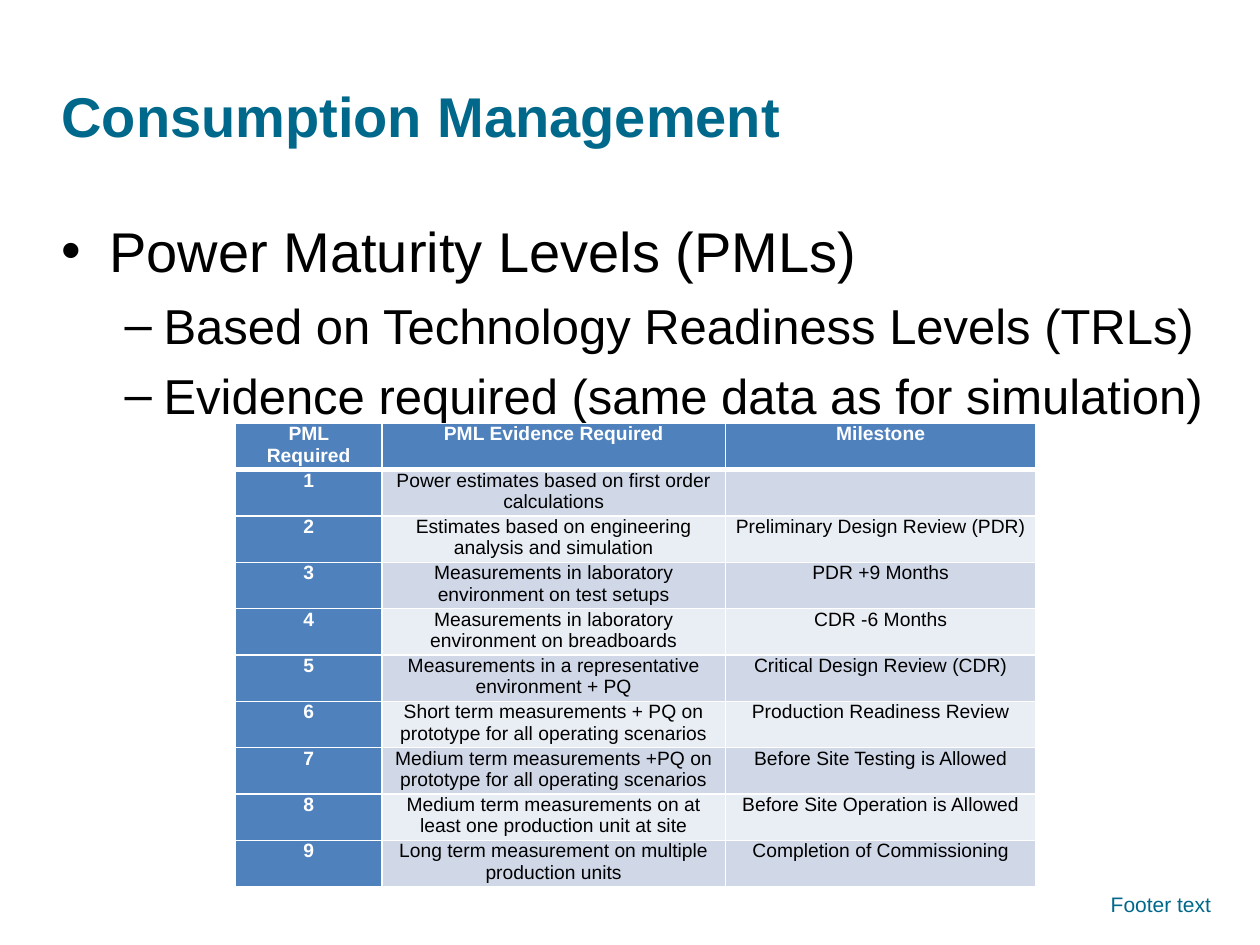
from lxml.etree import SubElement
from pptx import Presentation
from pptx.dml.color import RGBColor
from pptx.enum.text import MSO_ANCHOR, PP_ALIGN
from pptx.oxml.ns import qn
from pptx.util import Inches, Pt

# Content
TITLE = "Consumption Management"
BULLETS = [
    (0, "Power Maturity Levels (PMLs)"),
    (1, "Based on Technology Readiness Levels (TRLs)"),
    (1, "Evidence required (same data as for simulation)"),
]
FOOTER = "Footer text"
HEADER = ("PML Required", "PML Evidence Required", "Milestone")
LEVELS = [
    ("Power estimates based on first order calculations", ""),
    ("Estimates based on engineering analysis and simulation", "Preliminary Design Review (PDR)"),
    ("Measurements in laboratory environment on test setups", "PDR +9 Months"),
    ("Measurements in laboratory environment on breadboards", "CDR -6 Months"),
    ("Measurements in a representative environment + PQ", "Critical Design Review (CDR)"),
    ("Short term measurements + PQ on prototype for all operating scenarios",
     "Production Readiness Review"),
    ("Medium term measurements +PQ on prototype for all operating scenarios",
     "Before Site Testing is Allowed"),
    ("Medium term measurements on at least one production unit at site",
     "Before Site Operation is Allowed"),
    ("Long term measurement on multiple production units", "Completion of Commissioning"),
]
COLUMN_WIDTHS = (1.16, 2.73, 2.46)

THEME = {
    "font": "Arial",
    "accent": "00688A", "text": "000000", "white": "FFFFFF",
    "head": "4F81BD", "bands": ("D0D8E8", "E9EDF4"),
    "title_size": 32, "footer_size": 12, "table_size": 11,
}
# Per level: character, text indent, hanging indent, type size
BULLET_STYLES = [("•", 0.38, 0.38, 32), ("–", 0.81, 0.31, 28)]


def style(paragraph, size, color, bold=False, align=PP_ALIGN.LEFT):
    paragraph.alignment = align
    font = paragraph.font
    font.name, font.size, font.bold = THEME["font"], Pt(size), bold
    font.color.rgb = RGBColor.from_string(color)


def add_text_frame(slide, left, top, width, height):
    box = slide.shapes.add_textbox(Inches(left), Inches(top), Inches(width), Inches(height))
    box.text_frame.word_wrap = True
    return box.text_frame


def add_bullet(paragraph, level):
    character, indent, hanging, _ = BULLET_STYLES[level]
    paragraph.level = level
    properties = paragraph._p.get_or_add_pPr()
    properties.set("marL", str(Inches(indent)))
    properties.set("indent", str(-Inches(hanging)))
    SubElement(properties, qn("a:buFont"), typeface=THEME["font"])
    SubElement(properties, qn("a:buChar"), char=character)


def add_borders(cell, bottom_width):
    properties = cell._tc.get_or_add_tcPr()
    widths = {"a:lnL": 1, "a:lnR": 1, "a:lnT": 1, "a:lnB": bottom_width}
    for position, (side, width) in enumerate(widths.items()):
        line = SubElement(properties, qn(side), w=str(Pt(width)))
        fill = SubElement(line, qn("a:solidFill"))
        SubElement(fill, qn("a:srgbClr"), val=THEME["white"])
        properties.insert(position, line)


def fill_cell(cell, text, row, column):
    is_head = row == 0 or column == 0
    cell.margin_left = cell.margin_right = Inches(0.07)
    cell.margin_top = cell.margin_bottom = 0
    cell.fill.solid()
    color = THEME["head"] if is_head else THEME["bands"][(row - 1) % 2]
    cell.fill.fore_color.rgb = RGBColor.from_string(color)
    add_borders(cell, 3 if row == 0 else 1)
    cell.text = text
    style(cell.text_frame.paragraphs[0], THEME["table_size"],
          THEME["white"] if is_head else THEME["text"], is_head, PP_ALIGN.CENTER)


presentation = Presentation()
presentation.slide_width, presentation.slide_height = Inches(10), Inches(7.5)
slide = presentation.slides.add_slide(presentation.slide_layouts[6])

# Bullets
frame = add_text_frame(slide, 0.39, 1.62, 9.31, 1.67)
frame.margin_top = Inches(0.1)
for number, (level, text) in enumerate(BULLETS):
    paragraph = frame.add_paragraph() if number else frame.paragraphs[0]
    paragraph.text = text
    if number:
        paragraph.space_before = Pt(6.5)
    add_bullet(paragraph, level)
    style(paragraph, BULLET_STYLES[level][3], THEME["text"])

# Title
frame = add_text_frame(slide, 0.39, 0.57, 6.86, 0.68)
frame.vertical_anchor = MSO_ANCHOR.MIDDLE
frame.text = TITLE
style(frame.paragraphs[0], THEME["title_size"], THEME["accent"], bold=True)

# Footer
frame = add_text_frame(slide, 6.54, 7.03, 3.17, 0.4)
frame.text = FOOTER
style(frame.paragraphs[0], THEME["footer_size"], THEME["accent"], align=PP_ALIGN.RIGHT)

# Maturity level table
rows = [HEADER] + [(str(number), *level) for number, level in enumerate(LEVELS, 1)]
table = slide.shapes.add_table(len(rows), len(HEADER), Inches(1.87), Inches(3.36),
                               Inches(sum(COLUMN_WIDTHS)), Inches(3.68)).table
for column, width in zip(table.columns, COLUMN_WIDTHS):
    column.width = Inches(width)
for row, texts in enumerate(rows):
    for column, text in enumerate(texts):
        fill_cell(table.cell(row, column), text, row, column)

presentation.save("out.pptx")
